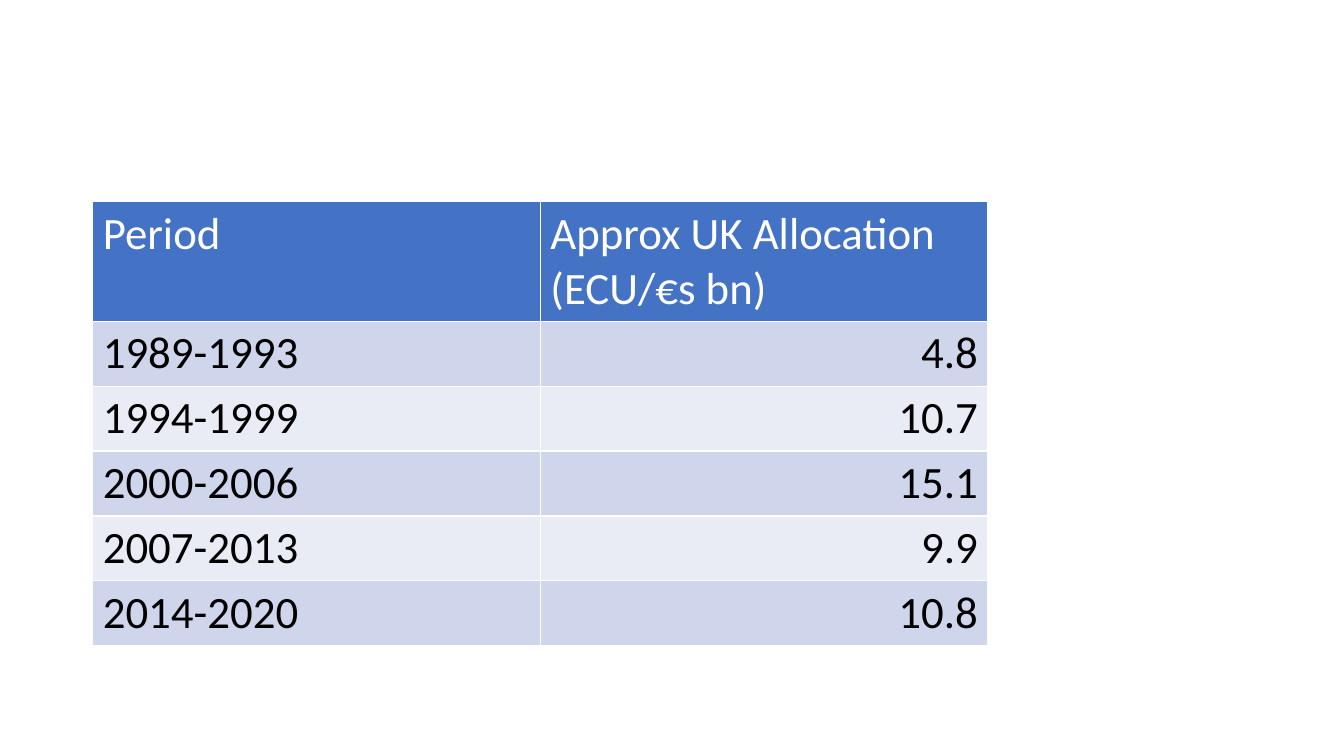
from pptx import Presentation
from pptx.dml.color import RGBColor
from pptx.enum.text import PP_ALIGN
from pptx.util import Inches, Pt

LEFT, RIGHT = PP_ALIGN.LEFT, PP_ALIGN.RIGHT
WHITE = RGBColor(0xFF, 0xFF, 0xFF)
BLACK = RGBColor(0x00, 0x00, 0x00)
BLUE = RGBColor(0x44, 0x72, 0xC4)
BANDS = [RGBColor(0xCF, 0xD5, 0xEA), RGBColor(0xE9, 0xEB, 0xF5)]

BLANK_LAYOUT = 6
FONT = {"name": "Calibri", "size": Pt(32), "bold": False}
COLUMN_WIDTH = 4.44
HEADER_HEIGHT, ROW_HEIGHT = 1.18, 0.64

HEADER = ("Period", "Approx UK Allocation (ECU/€s bn)")
ALLOCATIONS = [
    ("1989-1993", "4.8"),
    ("1994-1999", "10.7"),
    ("2000-2006", "15.1"),
    ("2007-2013", "9.9"),
    ("2014-2020", "10.8"),
]


def fill_cell(cell, text, fill, color, align):
    cell.fill.solid()
    cell.fill.fore_color.rgb = fill
    p = cell.text_frame.paragraphs[0]
    p.alignment = align
    r = p.add_run()
    r.text = text
    for name, value in FONT.items():
        setattr(r.font, name, value)
    r.font.color.rgb = color


def add_allocation_table(s, left, top):
    rows = [HEADER] + ALLOCATIONS
    heights = [HEADER_HEIGHT] + [ROW_HEIGHT] * len(ALLOCATIONS)
    table = s.shapes.add_table(
        len(rows), len(HEADER), Inches(left), Inches(top),
        Inches(COLUMN_WIDTH * len(HEADER)), Inches(sum(heights))).table
    for column in table.columns:
        column.width = Inches(COLUMN_WIDTH)
    for i, (values, height) in enumerate(zip(rows, heights)):
        table.rows[i].height = Inches(height)
        is_header = i == 0
        fill = BLUE if is_header else BANDS[(i - 1) % 2]
        color = WHITE if is_header else BLACK
        for j, text in enumerate(values):
            align = RIGHT if j and not is_header else LEFT
            fill_cell(table.cell(i, j), text, fill, color, align)


def main():
    prs = Presentation()
    prs.slide_width, prs.slide_height = Inches(13.33), Inches(7.5)
    s = prs.slides.add_slide(prs.slide_layouts[BLANK_LAYOUT])
    add_allocation_table(s, 0.92, 2)
    prs.save("out.pptx")


if __name__ == "__main__":
    main()
